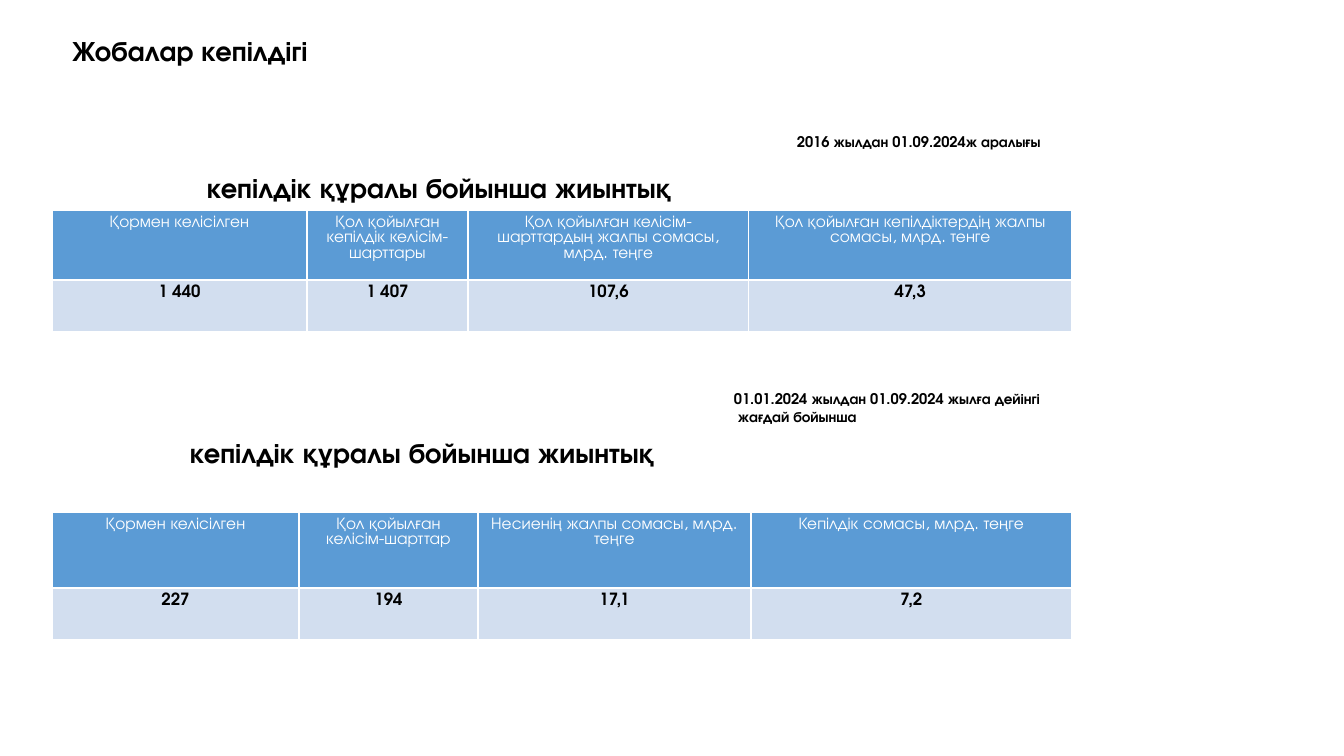
"""Build the slide that sums up project guarantees in two tables."""
from dataclasses import dataclass

from lxml import etree
from pptx import Presentation, util as u
from pptx.dml.color import RGBColor
from pptx.enum import text
from pptx.oxml.ns import qn

PX = 914400 / 100.8


@dataclass(frozen=True)
class Theme:
    font: str = "TeX Gyre Adventor"
    ink: str = "000000"
    white: str = "FFFFFF"
    head: str = "5B9BD5"
    band: str = "D2DEEF"
    title: float = 20
    note: float = 10.5
    body: float = 12
    lead: float = 11
    rule: float = 1


def px(n):
    return u.Emu(round(n * PX))


def write(frame, words, *, font, size, color, bold=False, align=None, lead=None):
    frame.word_wrap = True
    for i, line in enumerate(words.split("\n")):
        para = frame.add_paragraph() if i else frame.paragraphs[0]
        if align is not None:
            para.alignment = align
        if lead:
            para.line_spacing = u.Pt(lead)
        run = para.add_run()
        run.text = line
        run.font.name = font
        run.font.size = u.Pt(size)
        run.font.bold = bold
        run.font.color.rgb = RGBColor.from_string(color)


class Deck:
    def __init__(self, theme):
        self.theme = theme
        self.file = Presentation()
        self.file.slide_width, self.file.slide_height = px(1344), px(756)
        self.slide = self.file.slides.add_slide(self.file.slide_layouts[6])

    def label(self, words, x, y, w, h, size):
        box = self.slide.shapes.add_textbox(px(x), px(y), px(w), px(h))
        write(box.text_frame, words, font=self.theme.font, size=size,
              color=self.theme.ink, bold=True)

    def edge(self, cell):
        props = cell._tc.get_or_add_tcPr()
        for i, side in enumerate("LRTB"):
            line = etree.Element(qn(f"a:ln{side}"), w=str(u.Pt(self.theme.rule)))
            fill = etree.SubElement(line, qn("a:solidFill"))
            etree.SubElement(fill, qn("a:srgbClr"), val=self.theme.white)
            props.insert(i, line)

    def table(self, rows, x, y, cols, highs):
        t = self.theme
        grid = self.slide.shapes.add_table(
            len(rows), len(cols), px(x), px(y), px(sum(cols)), px(sum(highs))).table
        for col, w in zip(grid.columns, cols):
            col.width = px(w)
        for r, (row, h) in enumerate(zip(rows, highs)):
            grid.rows[r].height = px(h)
            for c, words in enumerate(row):
                cell = grid.cell(r, c)
                cell.fill.solid()
                cell.fill.fore_color.rgb = RGBColor.from_string(t.band if r else t.head)
                self.edge(cell)
                write(cell.text_frame, words, font=t.font, size=t.body,
                      color=t.ink if r else t.white, bold=r > 0,
                      align=text.PP_ALIGN.CENTER, lead=t.lead)


def main():
    theme = Theme()
    deck = Deck(theme)
    total = "кепілдік құралы бойынша жиынтық"
    deck.label("Жобалар кепілдігі", 62, 29, 483, 44, theme.title)
    deck.label("2016 жылдан 01.09.2024ж аралығы", 787, 128, 355, 28, theme.note)
    deck.label(total, 197, 166, 527, 44, theme.title)
    deck.table([
        ["Қормен келісілген", "Қол қойылған кепілдік келісім-шарттары",
         "Қол қойылған келісім-шарттардың жалпы сомасы, млрд. теңге",
         "Қол қойылған кепілдіктердің жалпы сомасы, млрд. тенге"],
        ["1 440", "1 407", "107,6", "47,3"],
    ], 52, 210, [255, 161, 281, 323], [70, 52])
    deck.label("01.01.2024 жылдан 01.09.2024 жылға дейінгі\n жағдай бойынша",
               724, 385, 461, 45, theme.note)
    deck.label(total, 180, 431, 679, 78, theme.title)
    deck.table([
        ["Қормен келісілген", "Қол қойылған келісім-шарттар",
         "Несиенің жалпы сомасы, млрд. теңге", "Кепілдік сомасы, млрд. теңге"],
        ["227", "194", "17,1", "7,2"],
    ], 52, 512, [247, 179, 273, 321], [76, 52])
    deck.file.save("out.pptx")


if __name__ == "__main__":
    main()
